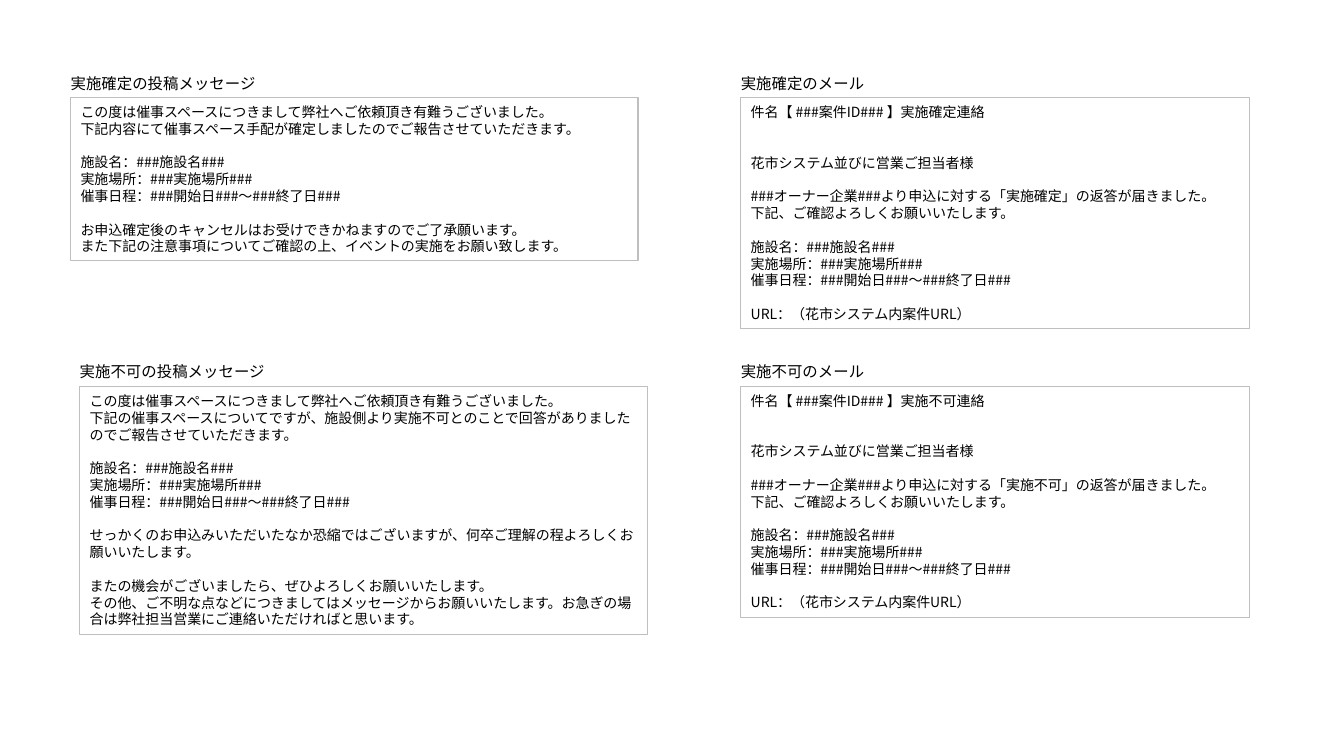
"""Build a slide of four message templates: posts and mails for confirmed and declined events."""
import pptx
import pptx.dml.color
import pptx.enum.shapes
import pptx.enum.text
import pptx.oxml
import pptx.oxml.ns
import pptx.util
from pptx.util import Cm

FONT = "Noto Sans CJK JP"
LINE_RATIO = 1.2


def color(value):
    return pptx.dml.color.RGBColor.from_string(value)


def write_text(text_frame, text, size=10, gap=0, first=False):
    paragraph = text_frame.paragraphs[0] if first else text_frame.add_paragraph()
    paragraph.alignment = pptx.enum.text.PP_ALIGN.LEFT
    paragraph.line_spacing = pptx.util.Pt(size * LINE_RATIO)
    paragraph.space_before = pptx.util.Pt(gap * size * LINE_RATIO)
    run = paragraph.add_run()
    run.text = text
    run.font.size = pptx.util.Pt(size)
    run.font.name = FONT
    run.font.color.rgb = color("000000")
    east_asian = pptx.oxml.parse_xml(
        f'<a:ea {pptx.oxml.ns.nsdecls("a")} typeface="{FONT}"/>')
    run.font._element.find(pptx.oxml.ns.qn("a:latin")).addnext(east_asian)


presentation = pptx.Presentation()
presentation.slide_width = Cm(33.87)
presentation.slide_height = Cm(19.05)
slide = presentation.slides.add_slide(presentation.slide_layouts[6])

greeting = "この度は催事スペースにつきまして弊社へご依頼頂き有難うございました。"
event_details = [
    "施設名：###施設名###",
    "実施場所：###実施場所###",
    "催事日程：###開始日###～###終了日###",
]
confirmed_post = [
    [greeting, "下記内容にて催事スペース手配が確定しましたのでご報告させていただきます。"],
    event_details,
    ["お申込確定後のキャンセルはお受けできかねますのでご了承願います。",
     "また下記の注意事項についてご確認の上、イベントの実施をお願い致します。"],
]
declined_post = [
    [greeting,
     "下記の催事スペースについてですが、施設側より実施不可とのことで回答がありましたのでご報告させていただきます。"],
    event_details,
    ["せっかくのお申込みいただいたなか恐縮ではございますが、何卒ご理解の程よろしくお願いいたします。"],
    ["またの機会がございましたら、ぜひよろしくお願いいたします。",
     "その他、ご不明な点などにつきましてはメッセージからお願いいたします。お急ぎの場合は弊社担当営業にご連絡いただければと思います。"],
]
confirmed_mail, declined_mail = [
    [
        [f"件名【 ###案件ID### 】{result}連絡"],
        ["花市システム並びに営業ご担当者様"],
        [f"###オーナー企業###より申込に対する「{result}」の返答が届きました。",
         "下記、ご確認よろしくお願いいたします。"],
        event_details,
        ["URL：（花市システム内案件URL）"],
    ]
    for result in ("実施確定", "実施不可")
]

confirmed_top, declined_top = 2.46, 9.73
post_width, mail_width = 14.3, 12.83
mail_left, mail_height = 18.67, 5.82
panels = [
    ("実施確定の投稿メッセージ", confirmed_post, 1.78, confirmed_top, post_width, 4.11, 1),
    ("実施不可の投稿メッセージ", declined_post, 2.01, declined_top, post_width, 6.25, 1),
    ("実施確定のメール", confirmed_mail, mail_left, confirmed_top, mail_width, mail_height, 2),
    ("実施不可のメール", declined_mail, mail_left, declined_top, mail_width, mail_height, 2),
]

for heading, message, left, top, width, height, first_gap in panels:
    box = slide.shapes.add_shape(
        pptx.enum.shapes.MSO_SHAPE.RECTANGLE, Cm(left), Cm(top), Cm(width), Cm(height))
    box.shadow.inherit = False
    box.fill.background()
    box.line.color.rgb = color("BFBFBF")
    box.line.width = pptx.util.Pt(0.75)
    box.text_frame.word_wrap = True
    box.text_frame.vertical_anchor = pptx.enum.text.MSO_ANCHOR.MIDDLE
    for group_index, group in enumerate(message):
        group_gap = (0, first_gap, 1)[min(group_index, 2)]
        for line_index, line in enumerate(group):
            write_text(box.text_frame, line,
                       gap=group_gap if line_index == 0 else 0,
                       first=group_index == line_index == 0)

    label = slide.shapes.add_textbox(Cm(left - 0.25), Cm(top - 0.72), Cm(5.4), Cm(0.73))
    label.text_frame.word_wrap = True
    write_text(label.text_frame, heading, size=11, first=True)

presentation.save("out.pptx")
